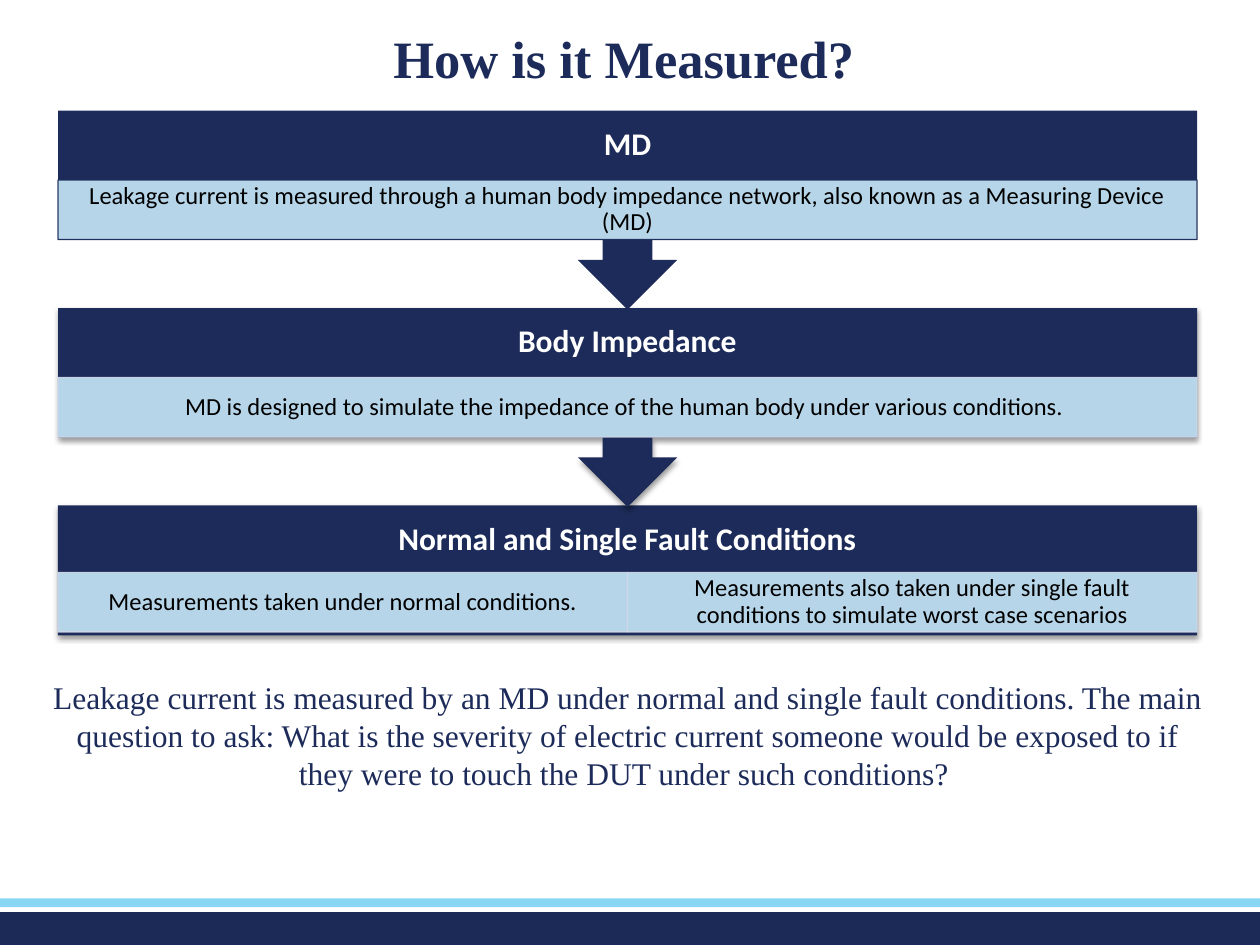
"""Build the slide that explains how leakage current is measured."""
from dataclasses import dataclass

from lxml.etree import SubElement
from pptx import Presentation
from pptx.dml.color import RGBColor as RGB
from pptx.enum.shapes import MSO_SHAPE as SHAPE
from pptx.enum.text import MSO_ANCHOR as ANCHOR, PP_ALIGN as ALIGN
from pptx.oxml.ns import qn
from pptx.util import Cm, Pt


@dataclass(frozen=True)
class Theme:
    """Colours, fonts and type sizes of the slide."""
    navy: str = "1C2B59"
    bar_navy: str = "1C2A58"
    sky: str = "88D6F4"
    pale: str = "C7E8F8"
    edge: str = "D0D8E8"
    white: str = "FFFFFF"
    black: str = "000000"
    serif: str = "Times New Roman"
    sans: str = "Calibri"
    title: int = 30
    heading: int = 18
    detail: int = 14


T = Theme()
LEFT, WIDTH = 1.17, 22.96
TOP, PITCH = 2.23, 3.98
HEADER_H, DETAIL_H = 1.4, 1.2
CALLOUT_H, PANEL_H = 4.01, 2.62
STAGES = [
    ("MD", ["Leakage current is measured through a human body impedance "
            "network, also known as a Measuring Device (MD)"]),
    ("Body Impedance", ["MD is designed to simulate the impedance of the "
                        "human body under various conditions. "]),
    ("Normal and Single Fault Conditions",
     ["Measurements taken under normal conditions.",
      "Measurements also taken under single fault conditions to simulate "
      "worst case scenarios"]),
]
SUMMARY = ("Leakage current is measured by an MD under normal and single fault "
           "conditions. The main question to ask: What is the severity of "
           "electric current someone would be exposed to if they were to touch "
           "the DUT under such conditions? ")


def write(sp, text, font, size, color, bold=False, spacing=None,
          anchor=ANCHOR.MIDDLE, inset=(0.25, 0.13)):
    """Put one centred run into a shape."""
    tf = sp.text_frame
    tf.word_wrap = True
    tf.vertical_anchor = anchor
    tf.margin_left = tf.margin_right = Cm(inset[0])
    tf.margin_top = tf.margin_bottom = Cm(inset[1])
    p = tf.paragraphs[0]
    p.alignment = ALIGN.CENTER
    p.line_spacing = spacing
    r = p.add_run()
    r.text = text
    r.font.name, r.font.size, r.font.bold = font, Pt(size), bold
    r.font.color.rgb = RGB.from_string(color)


def add_block(shapes, kind, left, top, width, height, fill):
    """Add a plain filled shape without line or shadow."""
    sp = shapes.add_shape(kind, Cm(left), Cm(top), Cm(width), Cm(height))
    sp.shadow.inherit = False
    sp.fill.solid()
    sp.fill.fore_color.rgb = RGB.from_string(fill)
    sp.line.fill.background()
    return sp


def add_shadow(sp):
    """Give a shape a soft shadow that falls straight down."""
    effects = sp._element.spPr.find(qn("a:effectLst"))
    shadow = SubElement(effects, qn("a:outerShdw"), blurRad=str(Pt(3.1)),
                        dist=str(Pt(1.6)), dir="5400000", rotWithShape="0")
    color = SubElement(shadow, qn("a:srgbClr"), val=T.black)
    SubElement(color, qn("a:alpha"), val="38000")


def add_detail(shapes, left, top, width, text, edge):
    """Add a slightly transparent detail cell with its text."""
    sp = add_block(shapes, SHAPE.RECTANGLE, left, top, width, DETAIL_H, T.pale)
    sp.line.color.rgb = RGB.from_string(edge)
    sp.line.width = Pt(0.75)
    for color in sp._element.spPr.iter(qn("a:srgbClr")):
        SubElement(color, qn("a:alpha"), val="90000")
    write(sp, text, T.sans, T.detail, T.black, spacing=0.9, inset=(0.28, 0.05))


def add_stage(shapes, index, heading, details):
    """Add one stage; every stage but the last points to the next."""
    first, last = index == 0, index == len(STAGES) - 1
    top = TOP + index * PITCH
    kind, height = ((SHAPE.RECTANGLE, PANEL_H) if last
                    else (SHAPE.UP_ARROW_CALLOUT, CALLOUT_H))
    block = add_block(shapes, kind, LEFT, top, WIDTH, height, T.navy)
    block.rotation = 0 if last else 180
    if not first:
        add_shadow(block)
    header = shapes.add_textbox(Cm(LEFT), Cm(top), Cm(WIDTH), Cm(HEADER_H))
    write(header, heading, T.sans, T.heading, T.white, bold=True, spacing=0.9,
          inset=(0.36, 0.36))
    cell = WIDTH / len(details)
    detail_top = top + (1.35 if last else HEADER_H)
    for i, text in enumerate(details):
        add_detail(shapes, LEFT + i * cell, detail_top, cell, text,
                   T.navy if first else T.edge)


def add_title(s, text):
    """Place and format the title placeholder."""
    sp = s.shapes.title
    sp.left, sp.top, sp.width, sp.height = Cm(2), Cm(0.43), Cm(21.16), Cm(1.47)
    write(sp, text, T.serif, T.title, T.navy, bold=True)


def add_summary(s, text):
    """Add the closing paragraph below the stages."""
    sp = s.shapes.add_textbox(Cm(0.81), Cm(13.54), Cm(23.7), Cm(2.57))
    write(sp, text, T.serif, T.heading, T.navy, anchor=ANCHOR.TOP)


def main():
    """Build and save the slide."""
    prs = Presentation()
    prs.slide_width, prs.slide_height = Cm(25.4), Cm(19.05)
    s = prs.slides.add_slide(prs.slide_layouts[5])
    for top, height, fill in ((18.39, 0.66, T.bar_navy), (18.11, 0.18, T.sky)):
        add_block(s.shapes, SHAPE.RECTANGLE, 0, top, 25.4, height, fill)
    add_title(s, "How is it Measured?")
    add_summary(s, SUMMARY)
    flow = s.shapes.add_group_shape()
    for index, (heading, details) in reversed(list(enumerate(STAGES))):
        add_stage(flow.shapes, index, heading, details)
    prs.save("out.pptx")


if __name__ == "__main__":
    main()
